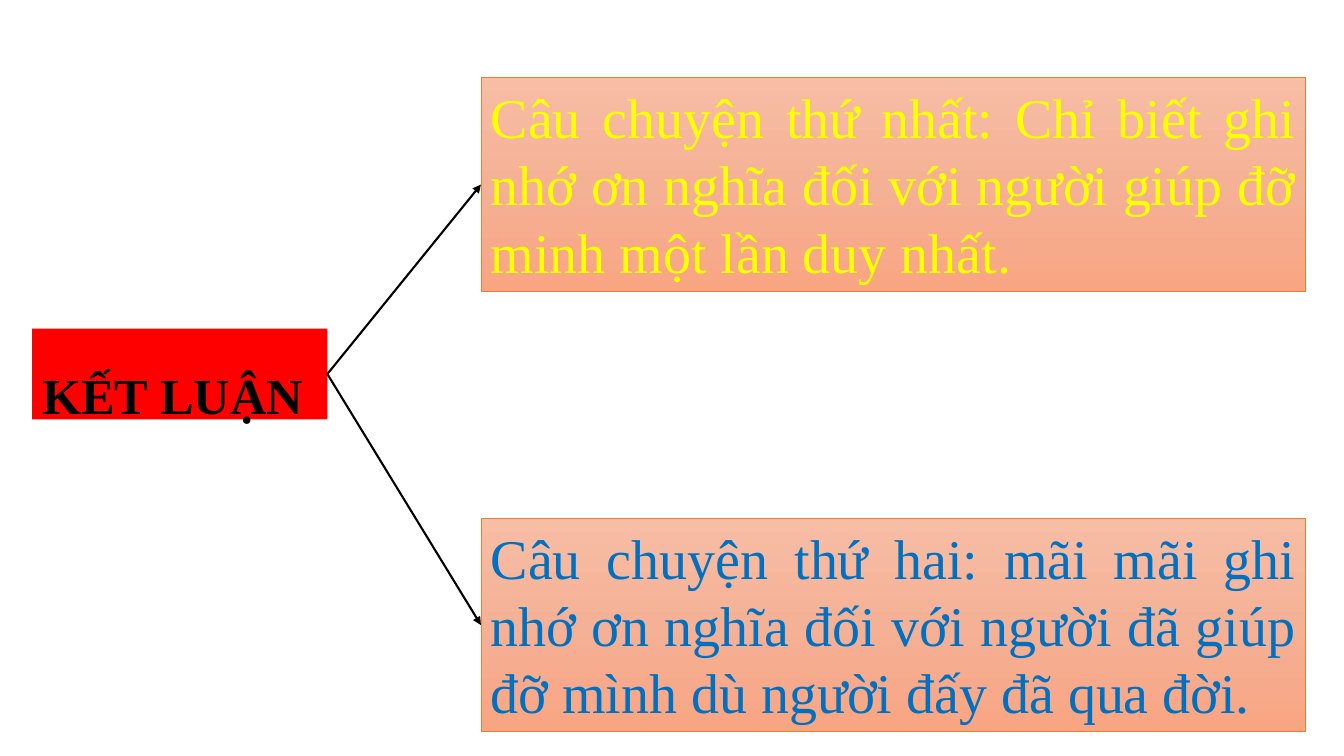
from copy import deepcopy
from dataclasses import dataclass

from pptx import Presentation
from pptx.dml.color import RGBColor
from pptx.enum.shapes import MSO_CONNECTOR, MSO_SHAPE
from pptx.enum.text import MSO_ANCHOR, MSO_AUTO_SIZE, PP_ALIGN
from pptx.oxml.ns import qn
from pptx.shapes.autoshape import Shape
from pptx.slide import Slide
from pptx.util import Cm, Pt
from lxml.etree import SubElement


@dataclass(frozen=True)
class Theme:
    font: str = "Times New Roman"
    head: int = 36
    body: int = 40
    edge: float = 0.5
    wire: float = 1.5
    red: str = "FF0000"
    black: str = "000000"
    yellow: str = "FFFF00"
    blue: str = "0070C0"
    orange: str = "ED7D31"
    fade: tuple[str, ...] = ("F7BDA5", "F5B196", "F8A582")


THEME = Theme()


@dataclass(frozen=True)
class Box:
    text: str
    left: float
    top: float
    width: float
    height: float
    ink: str
    size: int
    fill: tuple[str, ...]
    line: str | None = None
    bold: bool = False
    align: PP_ALIGN = PP_ALIGN.LEFT
    space: float = 1.0
    after: int = 0


def story(text: str, top: float, ink: str, after: int) -> Box:
    return Box(text, 12.12, top, 20.78, 5.38, ink, THEME.body, THEME.fade,
               THEME.orange, align=PP_ALIGN.JUSTIFY, after=after)


ROOT = Box("KẾT LUẬN", 0.81, 8.28, 7.44, 2.29, THEME.black, THEME.head,
           (THEME.red,), bold=True, space=1.5, after=8)
TALES = (
    story("Câu chuyện thứ nhất: Chỉ biết ghi nhớ ơn nghĩa đối với người "
          "giúp đỡ minh một lần duy nhất.", 1.96, THEME.yellow, 8),
    story("Câu chuyện thứ hai: mãi mãi ghi nhớ ơn nghĩa đối với người đã "
          "giúp đỡ mình dù người đấy đã qua đời.", 13.06, THEME.blue, 0),
)


def color(code: str) -> RGBColor:
    return RGBColor.from_string(code)


def paint(shape: Shape, tones: tuple[str, ...]) -> None:
    fill = shape.fill
    if len(tones) == 1:
        fill.solid()
        fill.fore_color.rgb = color(tones[0])
        return
    fill.gradient()
    fill.gradient_angle = 270
    stops = shape._element.spPr.find(f".//{qn('a:gsLst')}")
    while len(stops) < len(tones):
        stops.append(deepcopy(stops[0]))
    for spot, (stop, tone) in enumerate(zip(fill.gradient_stops, tones)):
        stop.position = spot / (len(tones) - 1)
        stop.color.rgb = color(tone)


def draw_box(slide: Slide, box: Box) -> Shape:
    shape = slide.shapes.add_shape(
        MSO_SHAPE.RECTANGLE, Cm(box.left), Cm(box.top), Cm(box.width), Cm(box.height))
    shape.shadow.inherit = False
    paint(shape, box.fill)
    if box.line:
        shape.line.color.rgb = color(box.line)
        shape.line.width = Pt(THEME.edge)
    else:
        shape.line.fill.background()
    frame = shape.text_frame
    frame.word_wrap = True
    frame.auto_size = MSO_AUTO_SIZE.SHAPE_TO_FIT_TEXT
    frame.vertical_anchor = MSO_ANCHOR.TOP
    para = frame.paragraphs[0]
    para.alignment = box.align
    para.line_spacing = box.space
    para.space_after = Pt(box.after)
    run = para.add_run()
    run.text = box.text
    run.font.name = THEME.font
    run.font.size = Pt(box.size)
    run.font.bold = box.bold
    run.font.color.rgb = color(box.ink)
    return shape


def join(slide: Slide, start: Shape, end: Shape) -> None:
    wire = slide.shapes.add_connector(MSO_CONNECTOR.STRAIGHT, 0, 0, 0, 0)
    wire.begin_connect(start, 3)
    wire.end_connect(end, 1)
    wire.line.color.rgb = color(THEME.black)
    wire.line.width = Pt(THEME.wire)
    SubElement(wire.line._get_or_add_ln(), qn("a:tailEnd"), type="triangle")
    SubElement(wire._element.spPr, qn("a:effectLst"))


def main() -> None:
    deck = Presentation()
    deck.slide_width, deck.slide_height = Cm(33.87), Cm(19.05)
    slide = deck.slides.add_slide(deck.slide_layouts[6])
    root = draw_box(slide, ROOT)
    for tale in TALES:
        join(slide, root, draw_box(slide, tale))
    deck.save("out.pptx")


if __name__ == "__main__":
    main()
